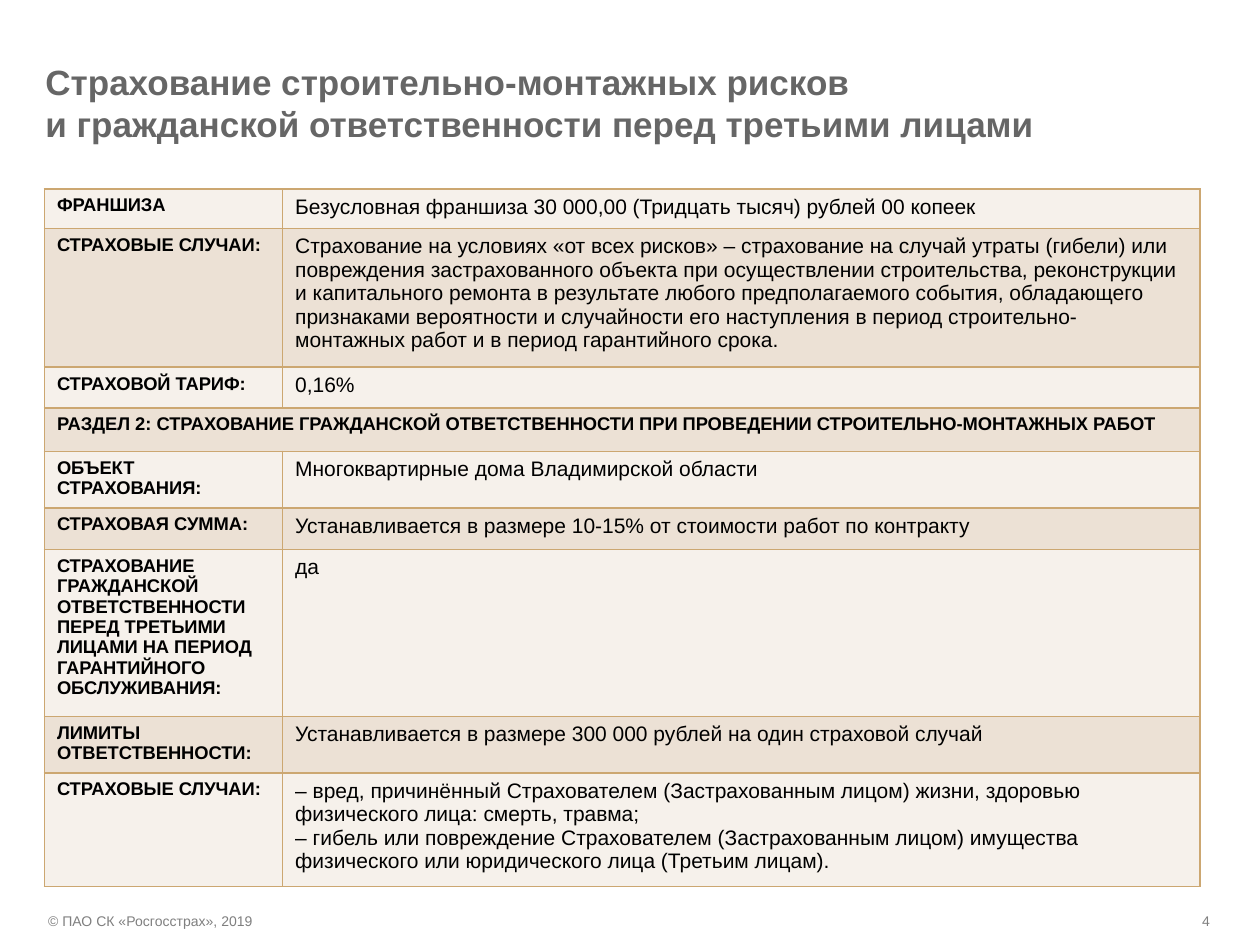
from pptx import Presentation
from pptx.dml.color import RGBColor
from pptx.enum.text import MSO_ANCHOR, PP_ALIGN
from pptx.oxml import parse_xml
from pptx.oxml.ns import nsdecls
from pptx.util import Pt

TITLE = [
    "Страхование строительно-монтажных рисков",
    "и гражданской ответственности перед третьими лицами",
]
COPYRIGHT = "© ПАО СК «Росгосстрах», 2019"
PAGE_NUMBER = "4"

ROWS = [
    (22.6, "ФРАНШИЗА", ["Безусловная франшиза 30 000,00 (Тридцать тысяч) рублей 00 копеек"]),
    (74.6, "СТРАХОВЫЕ СЛУЧАИ:", [
        "Страхование на условиях «от всех рисков» – страхование на случай утраты (гибели) "
        "или повреждения застрахованного объекта при осуществлении строительства, "
        "реконструкции и капитального ремонта в результате любого предполагаемого события, "
        "обладающего признаками вероятности и случайности его наступления в период "
        "строительно-монтажных работ и в период гарантийного срока.",
    ]),
    (23.4, "СТРАХОВОЙ ТАРИФ:", ["0,16%"]),
    (24.7, "РАЗДЕЛ 2: СТРАХОВАНИЕ ГРАЖДАНСКОЙ ОТВЕТСТВЕННОСТИ "
           "ПРИ ПРОВЕДЕНИИ СТРОИТЕЛЬНО-МОНТАЖНЫХ РАБОТ", []),
    (30.5, "ОБЪЕКТ СТРАХОВАНИЯ:", ["Многоквартирные дома Владимирской области"]),
    (23.7, "СТРАХОВАЯ СУММА:", ["Устанавливается в размере 10-15% от стоимости работ по контракту"]),
    (88.8, "СТРАХОВАНИЕ ГРАЖДАНСКОЙ ОТВЕТСТВЕННОСТИ ПЕРЕД ТРЕТЬИМИ ЛИЦАМИ "
           "НА ПЕРИОД ГАРАНТИЙНОГО ОБСЛУЖИВАНИЯ:", ["да"]),
    (30.6, "ЛИМИТЫ ОТВЕТСТВЕННОСТИ:", ["Устанавливается в размере 300 000 рублей на один страховой случай"]),
    (60.8, "СТРАХОВЫЕ СЛУЧАИ:", [
        "– вред, причинённый Страхователем (Застрахованным лицом) жизни, здоровью "
        "физического лица: смерть, травма;",
        "– гибель или повреждение Страхователем (Застрахованным лицом) имущества "
        "физического или юридического лица (Третьим лицам).",
    ]),
]
COLUMN_WIDTHS = [136.1, 524.2]
ROW_FILLS = ["F6F1EB", "ECE1D5"]
BORDER = "CCA771"


def color(value):
    return RGBColor.from_string(value)


def write(frame, lines, size, ink, bold=False):
    frame.text = "\n".join(lines)
    for para in frame.paragraphs:
        font = para.font
        font.name, font.size, font.bold = "Arial", Pt(size), bold
        font.color.rgb = color(ink)


def add_text(page, place, lines, size, ink, bold=False, left_inset=0.0):
    box = page.shapes.add_textbox(*map(Pt, place))
    frame = box.text_frame
    frame.word_wrap = True
    frame.margin_left = Pt(left_inset)
    write(frame, lines, size, ink, bold)
    return frame


def add_borders(cell):
    properties = cell._tc.get_or_add_tcPr()
    for index, side in enumerate(["lnL", "lnR", "lnT", "lnB"]):
        properties.insert(index, parse_xml(
            f'<a:{side} {nsdecls("a")} w="12700"><a:solidFill>'
            f'<a:srgbClr val="{BORDER}"/></a:solidFill></a:{side}>'))


def add_conditions(page):
    heights = [height for height, label, details in ROWS]
    table = page.shapes.add_table(
        len(ROWS), len(COLUMN_WIDTHS), Pt(25.4), Pt(108),
        Pt(sum(COLUMN_WIDTHS)), Pt(sum(heights))).table
    table.first_row = table.horz_banding = False
    for column, width in zip(table.columns, COLUMN_WIDTHS):
        column.width = Pt(width)
    for index, (height, label, details) in enumerate(ROWS):
        row = table.rows[index]
        row.height = Pt(height)
        label_cell, detail_cell = row.cells
        for cell in (label_cell, detail_cell):
            cell.fill.solid()
            cell.fill.fore_color.rgb = color(ROW_FILLS[index % 2])
            add_borders(cell)
        write(label_cell.text_frame, [label], 10.5, "000000", True)
        if details:
            write(detail_cell.text_frame, details, 12, "000000")
        else:
            label_cell.merge(detail_cell)


def main():
    deck = Presentation()
    deck.slide_width, deck.slide_height = Pt(720), Pt(540)
    page = deck.slides.add_slide(deck.slide_layouts[6])

    title = add_text(page, (26, 35.5, 615, 46), TITLE, 20, "666666", True)
    title.vertical_anchor = MSO_ANCHOR.MIDDLE
    for para in title.paragraphs:
        para.line_spacing = Pt(24.3)

    add_conditions(page)

    add_text(page, (27.5, 517.7, 126, 17.3), [COPYRIGHT], 8, "7F7F7F")
    number = add_text(page, (674, 517.7, 24.5, 17.3), [PAGE_NUMBER], 8, "7F7F7F", left_inset=7.2)
    number.paragraphs[0].alignment = PP_ALIGN.RIGHT

    deck.save("out.pptx")


if __name__ == "__main__":
    main()
